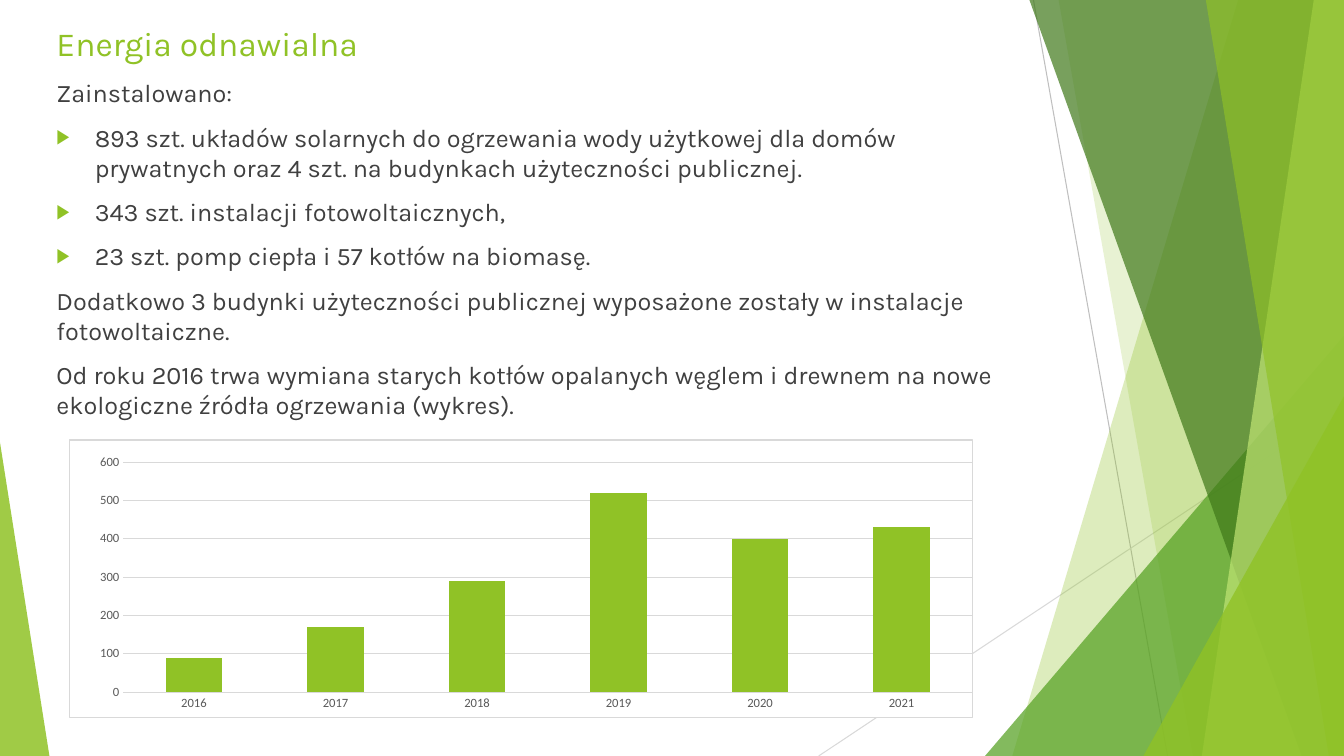
from lxml import etree
from pptx import Presentation
from pptx import util as u
from pptx.chart.data import CategoryChartData
from pptx.dml.color import RGBColor
from pptx.enum import chart as ch, shapes, text
from pptx.oxml import parse_xml
from pptx.oxml.ns import nsdecls, qn

PX = 9144  # 100 px to the inch
W, H = 1333, 750
LIME = RGBColor(0x90, 0xC2, 0x26)
GREEN = RGBColor(0x54, 0xA0, 0x21)
DARK = RGBColor(0x3F, 0x78, 0x19)
PALE = RGBColor(0xC0, 0xE4, 0x74)
INK = RGBColor(0x40, 0x40, 0x40)
LABEL = RGBColor(0x59, 0x59, 0x59)
SILVER = RGBColor(0xBF, 0xBF, 0xBF)
RULE = RGBColor(0xD9, 0xD9, 0xD9)
WHITE = RGBColor(0xFF, 0xFF, 0xFF)

# Content
TITLE = "Energia odnawialna"
BODY = [  # (bulleted, text)
    (False, "Zainstalowano:"),
    (True, "893 szt. układów solarnych do ogrzewania wody użytkowej dla domów "
           "prywatnych oraz 4 szt. na budynkach użyteczności publicznej."),
    (True, "343 szt. instalacji fotowoltaicznych,"),
    (True, "23 szt. pomp ciepła i 57 kotłów na biomasę."),
    (False, "Dodatkowo 3 budynki użyteczności publicznej wyposażone zostały "
            "w instalacje fotowoltaiczne."),
    (False, "Od roku 2016 trwa wymiana starych kotłów opalanych węglem i drewnem "
            "na nowe ekologiczne źródła ogrzewania (wykres)."),
]
BOILERS = {"2016": 90, "2017": 170, "2018": 290, "2019": 520, "2020": 400, "2021": 430}

# Decoration, back to front
LINES = [((1025, 0), (1158, H), SILVER), ((W, 403), (812, H), RULE)]
PANELS = [  # band: top x, bottom x; triangle: left, top, width, apex position
    ("band", (1228, 1004), LIME, 30),
    ("band", (1050, 1183), LIME, 20),
    ("triangle", (977, 333, 356, 1), GREEN, 72),
    ("band", (1021, 1291), DARK, 70),
    ("band", (1303, 1192), PALE, 70),
    ("band", (1196, 1318), LIME, 65),
    ("triangle", (1134, 393, 199, 1), LIME, 80),
    ("triangle", (0, 439, 49, 0), LIME, 85),
]

prs = Presentation()
prs.slide_width, prs.slide_height = W * PX, H * PX
s = prs.slides.add_slide(prs.slide_layouts[1])


def px(*lengths):
    return [n * PX for n in lengths]


def style_font(font, size, color, name):
    font.size, font.name = u.Pt(size), name
    font.color.rgb = color


def style_line(line, color):
    line.color.rgb, line.width = color, u.Pt(0.75)


def place(sp, left, top, width, height):
    sp.left, sp.top, sp.width, sp.height = px(left, top, width, height)
    tf = sp.text_frame
    tf.word_wrap, tf.auto_size = True, text.MSO_AUTO_SIZE.NONE
    tf.vertical_anchor = text.MSO_ANCHOR.TOP
    return tf


# Thin lines
for start, end, color in LINES:
    line = s.shapes.add_connector(shapes.MSO_CONNECTOR.STRAIGHT, *px(*start, *end))
    style_line(line.line, color)
    etree.SubElement(line._element.spPr, qn("a:effectLst"))

# Translucent panels
for kind, dims, color, alpha in PANELS:
    if kind == "band":
        top_x, bottom_x = dims
        outline = s.shapes.build_freeform(top_x, 0, scale=PX)
        outline.add_line_segments([(W, 0), (W, H), (bottom_x, H)], close=True)
        sp = outline.convert_to_shape()
    else:
        left, top, width, apex = dims
        sp = s.shapes.add_shape(shapes.MSO_SHAPE.ISOSCELES_TRIANGLE,
                                *px(left, top, width, H - top))
        sp.adjustments[0] = apex
    sp.shadow.inherit = False
    sp.line.fill.background()
    sp.fill.solid()
    sp.fill.fore_color.rgb = color
    tint = sp._element.spPr.find(qn("a:solidFill"))[0]
    etree.SubElement(tint, qn("a:alpha"), val=str(alpha * 1000))

# Title and body, in front of the panels
title, body = s.shapes.title, s.placeholders[1]
for sp in (title, body):
    s.shapes._spTree.append(sp._element)

tf = place(title, 46, 18, 940, 67)
tf.text = TITLE
p = tf.paragraphs[0]
p.alignment = text.PP_ALIGN.LEFT
style_font(p.runs[0].font, 24, LIME, "Karla")

tf = place(body, 46, 72, 968, 652)
tf.text = "\n".join(line for _, line in BODY)
for p, (bulleted, _) in zip(tf.paragraphs, BODY):
    p.space_before = u.Pt(10)
    style_font(p.runs[0].font, 18, INK, "Karla")
    pPr = p._p.get_or_add_pPr()
    indent = 38 * PX if bulleted else 0
    pPr.set("marL", str(indent))
    pPr.set("indent", str(-indent))
    if bulleted:
        color = etree.SubElement(pPr, qn("a:buClr"))
        etree.SubElement(color, qn("a:srgbClr"), val=str(LIME))
        etree.SubElement(pPr, qn("a:buSzPct"), val="80000")
        etree.SubElement(pPr, qn("a:buChar"), char="▶")
    else:
        etree.SubElement(pPr, qn("a:buNone"))

# Chart
data = CategoryChartData()
data.categories = list(BOILERS)
data.add_series("Series 1", list(BOILERS.values()))
chart = s.shapes.add_chart(ch.XL_CHART_TYPE.COLUMN_CLUSTERED,
                           *px(68, 436, 897, 276), data).chart
chart.has_title = chart.has_legend = False
chart.font.size, chart.font.name = u.Pt(10), "Calibri"
plot = chart.plots[0]
plot.gap_width, plot.vary_by_categories = 150, False
columns = plot.series[0].format.fill
columns.solid()
columns.fore_color.rgb = LIME

years, counts = chart.category_axis, chart.value_axis
for axis in (years, counts):
    axis.major_tick_mark = axis.minor_tick_mark = ch.XL_TICK_MARK.NONE
    style_font(axis.tick_labels.font, 9, LABEL, "Calibri")
style_line(years.format.line, RULE)
counts.format.line.fill.background()
style_line(counts.major_gridlines.format.line, RULE)
counts.minimum_scale, counts.maximum_scale, counts.major_unit = 0, 600, 100

# Chart frame and plot position
chart_xml = chart._chartSpace.find(qn("c:chart"))
chart_xml.addnext(parse_xml(
    f'<c:spPr {nsdecls("c", "a")}><a:solidFill><a:srgbClr val="{WHITE}"/></a:solidFill>'
    f'<a:ln w="9525"><a:solidFill><a:srgbClr val="{RULE}"/></a:solidFill></a:ln></c:spPr>'))
plot_area = chart_xml.find(qn("c:plotArea"))
for old in plot_area.findall(qn("c:layout")):
    plot_area.remove(old)
layout = etree.Element(qn("c:layout"))
manual = etree.SubElement(layout, qn("c:manualLayout"))
for tag, val in [("layoutTarget", "inner"), ("xMode", "edge"), ("yMode", "edge"),
                 ("x", 0.06), ("y", 0.08), ("w", 0.94), ("h", 0.83)]:
    etree.SubElement(manual, qn(f"c:{tag}"), val=str(val))
plot_area.insert(0, layout)

prs.save("out.pptx")
